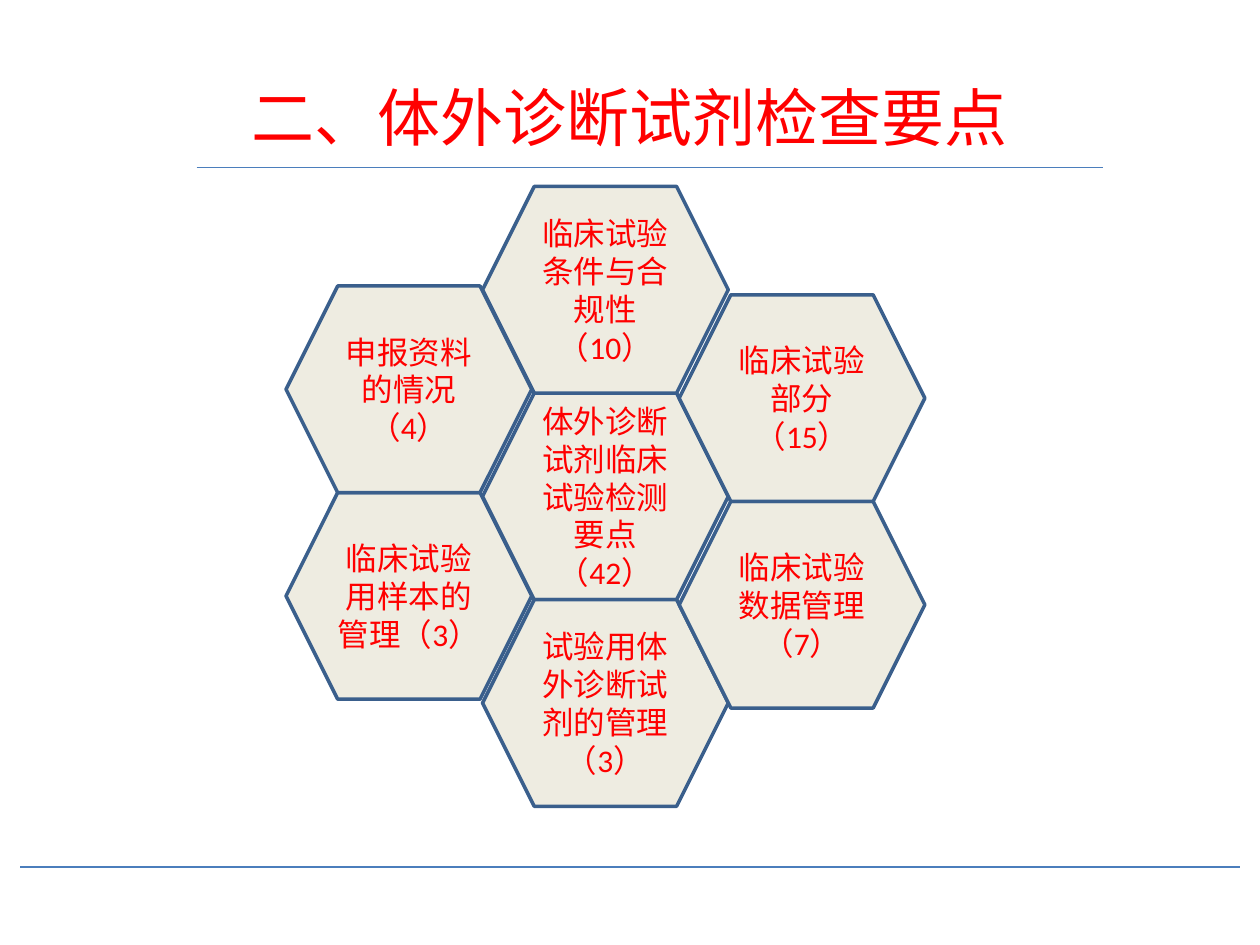
from lxml import etree
from pptx import Presentation
from pptx import util as u
from pptx.dml.color import RGBColor
from pptx.enum import shapes, text
from pptx.oxml.ns import qn

RED = RGBColor(0xFF, 0x00, 0x00)
CREAM = RGBColor(0xEE, 0xEC, 0xE1)
OUTLINE = RGBColor(0x3A, 0x5F, 0x8C)
RULE_BLUE = RGBColor(0x4B, 0x7E, 0xBC)
FONT = "Calibri"

# Honeycomb grid, in inches: each column starts at its own height
CELL_WIDTH, CELL_HEIGHT = 1.95, 1.64
GRID_LEFT, COLUMN_STEP = 2.27, 1.56
COLUMN_TOPS = (2.27, 1.48, 2.34)

# (column, row, topic, number of items), from back to front
CELLS = [
    (1, 1, "体外诊断试剂临床试验检测要点", 42),
    (1, 2, "试验用体外诊断试剂的管理", 3),
    (2, 1, "临床试验数据管理", 7),
    (0, 1, "临床试验用样本的管理", 3),
    (1, 0, "临床试验条件与合规性", 10),
    (0, 0, "申报资料的情况", 4),
    (2, 0, "临床试验部分", 15),
]


def write(box, wording, size):
    """Centre one red paragraph in a box."""
    frame = box.text_frame
    frame.word_wrap = True
    frame.vertical_anchor = text.MSO_ANCHOR.MIDDLE
    para = frame.paragraphs[0]
    para.alignment = text.PP_ALIGN.CENTER
    span = para.add_run()
    span.text = wording
    span.font.name = FONT
    span.font.size = u.Pt(size)
    span.font.color.rgb = RED


def add_title(page, wording):
    box = page.shapes.add_textbox(
        u.Inches(0.5), u.Inches(0.3), u.Inches(9), u.Inches(1.25))
    write(box, wording, 36)


def add_rule(page, left, right, top, weight):
    """Draw a horizontal rule without a shadow."""
    rule = page.shapes.add_connector(
        shapes.MSO_CONNECTOR.STRAIGHT,
        u.Inches(left), u.Inches(top), u.Inches(right), u.Inches(top))
    rule.line.color.rgb = RULE_BLUE
    rule.line.width = u.Pt(weight)
    etree.SubElement(rule._element.spPr, qn("a:effectLst"))


def add_cell(page, column, row, topic, count):
    """Place one hexagon of the honeycomb."""
    left = GRID_LEFT + column * COLUMN_STEP
    top = COLUMN_TOPS[column] + row * CELL_HEIGHT
    cell = page.shapes.add_shape(
        shapes.MSO_SHAPE.HEXAGON, u.Inches(left), u.Inches(top),
        u.Inches(CELL_WIDTH), u.Inches(CELL_HEIGHT))
    cell.shadow.inherit = False
    cell.fill.solid()
    cell.fill.fore_color.rgb = CREAM
    cell.line.color.rgb = OUTLINE
    cell.line.width = u.Pt(2)
    write(cell, f"{topic}（{count}）", 18)


def main():
    deck = Presentation()
    deck.slide_width, deck.slide_height = u.Inches(10), u.Inches(7.5)
    page = deck.slides.add_slide(deck.slide_layouts[6])

    # Heading
    add_title(page, "二、体外诊断试剂检查要点")
    add_rule(page, 1.56, 8.75, 1.33, 0.75)

    # Honeycomb of inspection topics
    for cell in CELLS:
        add_cell(page, *cell)

    # Footer rule
    add_rule(page, 0.16, 9.84, 6.88, 1.25)

    deck.save("out.pptx")


if __name__ == "__main__":
    main()
